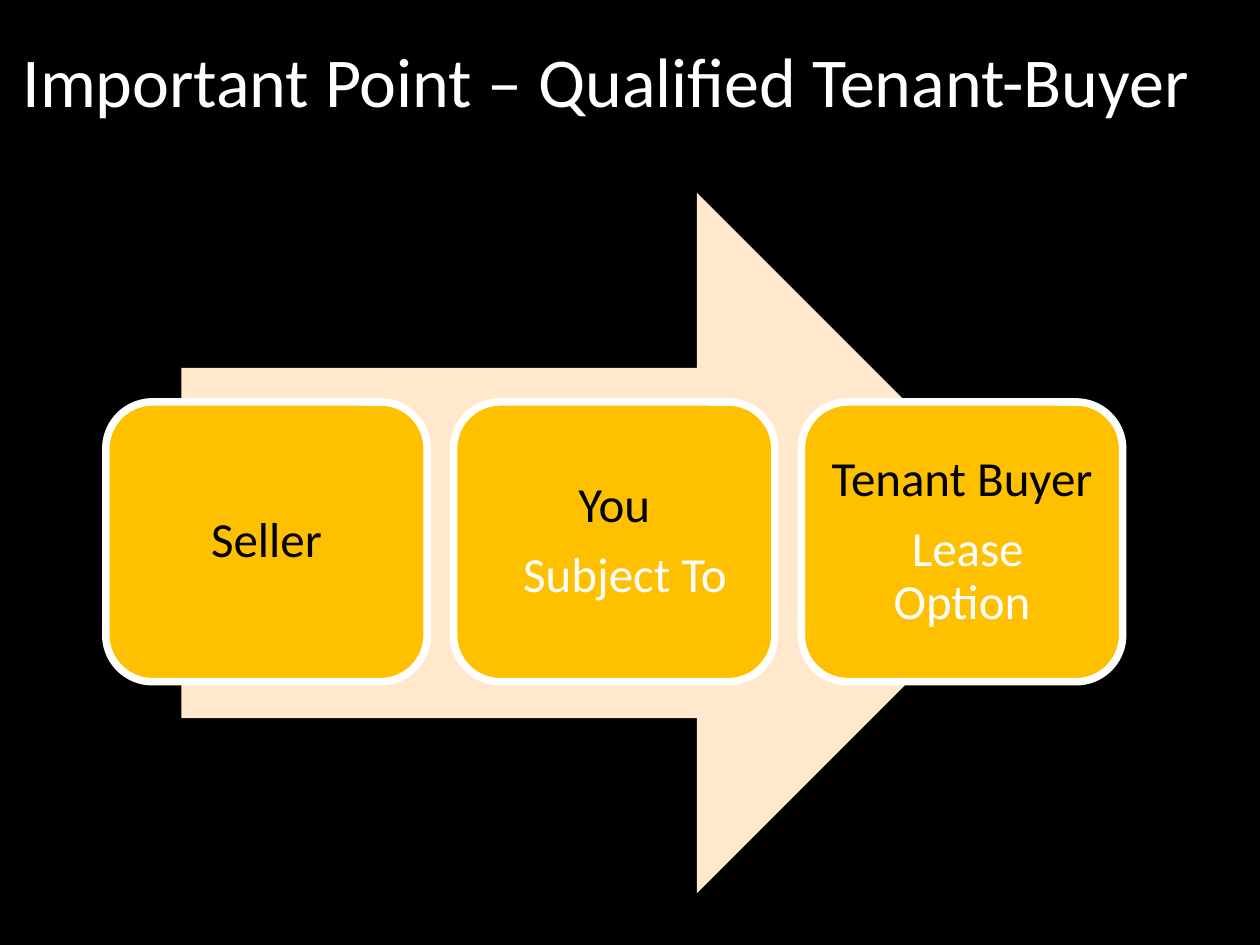
from pptx import Presentation
from pptx.dml.color import RGBColor
from pptx.enum.shapes import MSO_SHAPE
from pptx.enum.text import MSO_ANCHOR, PP_ALIGN
from pptx.util import Inches, Pt

COLORS = {"background": "000000", "arrow": "FFE8CC", "card": "FFC000",
          "light": "FFFFFF", "dark": "000000"}
FONT = "Calibri"
TITLE = "Important Point – Qualified Tenant-Buyer"
# Each line: text, colour, left margin and first-line indent in inches
CARDS = [
    [("Seller", "dark", 0, 0)],
    [("You", "dark", 0, 0), ("Subject To", "light", 0.17, 0)],
    [("Tenant Buyer", "dark", 0, 0), ("Lease Option", "light", 0, 0.09)],
]
CARD_LEFT, CARD_TOP, CARD_W, CARD_H, CARD_STEP = 0.84, 3.19, 2.55, 2.22, 2.76


def rgb(name):
    return RGBColor.from_string(COLORS[name])


def style(p, size, color):
    p.font.name = FONT
    p.font.size = Pt(size)
    p.font.color.rgb = rgb(color)


def add_filled(s, kind, box, color):
    sp = s.shapes.add_shape(kind, *map(Inches, box))
    sp.shadow.inherit = False
    sp.fill.solid()
    sp.fill.fore_color.rgb = rgb(color)
    sp.line.fill.background()
    return sp


def add_card(s, left, lines):
    sp = add_filled(s, MSO_SHAPE.ROUNDED_RECTANGLE,
                    (left, CARD_TOP, CARD_W, CARD_H), "card")
    sp.line.color.rgb = rgb("light")
    sp.line.width = Pt(4.33)
    tf = sp.text_frame
    tf.word_wrap = True
    tf.vertical_anchor = MSO_ANCHOR.MIDDLE
    tf.margin_left = tf.margin_right = Inches(0.12)
    tf.margin_top = tf.margin_bottom = Inches(0.12)
    for i, (text, color, margin, indent) in enumerate(lines):
        p = tf.add_paragraph() if i else tf.paragraphs[0]
        p.text = text
        p.alignment = PP_ALIGN.CENTER
        p.line_spacing = 0.9
        p.space_after = Pt(9.8)
        pPr = p._p.get_or_add_pPr()
        pPr.set("marL", str(Inches(margin)))
        pPr.set("indent", str(Inches(indent)))
        style(p, 28, color)


prs = Presentation()
prs.slide_width, prs.slide_height = Inches(10), Inches(7.5)
s = prs.slides.add_slide(prs.slide_layouts[6])
s.background.fill.solid()
s.background.fill.fore_color.rgb = rgb("background")

title = s.shapes.add_textbox(Inches(0.08), Inches(0.25), Inches(9.79), Inches(0.77))
title.text_frame.word_wrap = False
p = title.text_frame.paragraphs[0]
p.text = TITLE
style(p, 40, "light")

add_filled(s, MSO_SHAPE.RIGHT_ARROW, (1.44, 1.53, 6.87, 5.56), "arrow")
for i, lines in enumerate(CARDS):
    add_card(s, CARD_LEFT + i * CARD_STEP, lines)

prs.save("out.pptx")
